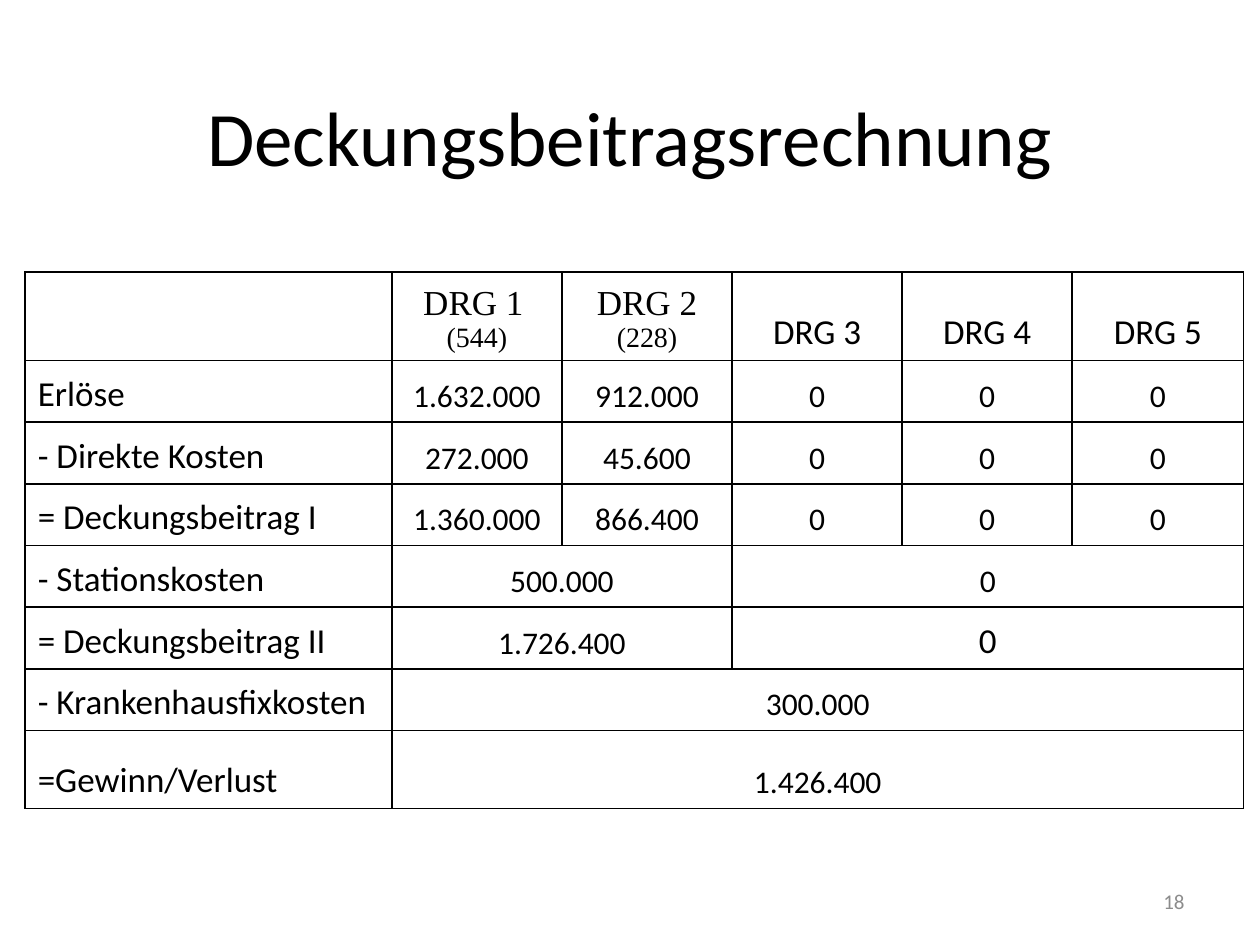
from lxml.etree import SubElement
from pptx import Presentation
from pptx.dml.color import RGBColor
from pptx.enum.text import MSO_ANCHOR, PP_ALIGN
from pptx.oxml.ns import qn
from pptx.util import Inches, Pt

SANS, SERIF = "Calibri", "Times New Roman"
BLACK, GREY = "000000", "8C8C8C"
COLS = [2.91, 1.35, 1.35, 1.35, 1.35, 1.36]
ROWS = [0.65] + [0.49] * 6 + [0.62]
SPANS = {5: [1] * 5, 2: [2, 3], 1: [5]}
HEADS = [
    [[("DRG 1", 20), (" ", 16)], [("(544)", 16)]],
    [[("DRG 2", 20)], [("(228)", 16)]],
    "DRG 3", "DRG 4", "DRG 5",
]
BODY = [
    ("Erlöse", ["1.632.000", "912.000", "0", "0", "0"]),
    ("- Direkte Kosten", ["272.000", "45.600", "0", "0", "0"]),
    ("= Deckungsbeitrag I", ["1.360.000", "866.400", "0", "0", "0"]),
    ("- Stationskosten", ["500.000", "0"]),
    ("= Deckungsbeitrag II", ["1.726.400", "0"]),
    ("- Krankenhausfixkosten", ["300.000"]),
    ("=Gewinn/Verlust", ["1.426.400"]),
]


def rgb(color):
    """Turn a hex string into a colour."""
    return RGBColor.from_string(color)


def add_run(p, text, size, font=SANS, color=BLACK):
    """Append one formatted run to a paragraph."""
    r = p.add_run()
    r.text = text
    r.font.size, r.font.name = Pt(size), font
    r.font.color.rgb = rgb(color)


def add_label(slide, box, text, size, align, color=BLACK):
    """Place one line of text, vertically centred in its box."""
    tf = slide.shapes.add_textbox(*map(Inches, box)).text_frame
    tf.word_wrap = True
    tf.vertical_anchor = MSO_ANCHOR.MIDDLE
    p = tf.paragraphs[0]
    p.alignment = align
    add_run(p, text, size, color=color)


def style_cell(cell):
    """Clear the fill, anchor at the bottom and draw black borders."""
    cell.vertical_anchor = MSO_ANCHOR.BOTTOM
    tcPr = cell._tc.get_or_add_tcPr()
    for side in ("lnL", "lnR", "lnT", "lnB"):
        ln = SubElement(tcPr, qn(f"a:{side}"), w=str(Pt(1)))
        fill = SubElement(ln, qn("a:solidFill"))
        SubElement(fill, qn("a:srgbClr"), val=BLACK)
    cell.fill.background()


def write_cell(cell, text, size, align=PP_ALIGN.CENTER):
    """Write one spaced line of text into a cell."""
    p = cell.text_frame.paragraphs[0]
    p.alignment = align
    p.line_spacing, p.space_after = 1.07, Pt(8)
    add_run(p, text, size)


def write_counted_head(cell, lines):
    """Write a heading with its case count below, on hanging indents."""
    tf = cell.text_frame
    for i, line in enumerate(lines):
        p = tf.add_paragraph() if i else tf.paragraphs[0]
        p.alignment = PP_ALIGN.CENTER
        pPr = p._p.get_or_add_pPr()
        pPr.set("marL", str(Inches(0.67)))
        pPr.set("indent", str(-Inches(0.67)))
        for text, size in line:
            add_run(p, text, size, SERIF)


def add_costing_table(slide, left, top):
    """Build the contribution margin table at the given corner."""
    table = slide.shapes.add_table(
        len(ROWS), len(COLS), Inches(left), Inches(top),
        Inches(sum(COLS)), Inches(sum(ROWS))).table
    table.first_row = table.horz_banding = False
    for col, width in zip(table.columns, COLS):
        col.width = Inches(width)
    for row, height in zip(table.rows, ROWS):
        row.height = Inches(height)
    for cell in table.iter_cells():
        style_cell(cell)

    for c, head in enumerate(HEADS, 1):
        if isinstance(head, str):
            write_cell(table.cell(0, c), head, 20)
        else:
            write_counted_head(table.cell(0, c), head)
    for r, (label, values) in enumerate(BODY, 1):
        write_cell(table.cell(r, 0), label, 20, PP_ALIGN.LEFT)
        c = 1
        for value, span in zip(values, SPANS[len(values)]):
            cell = table.cell(r, c)
            if span > 1:
                cell.merge(table.cell(r, c + span - 1))
            large = label == "= Deckungsbeitrag II" and value == "0"
            write_cell(cell, value, 20 if large else 18)
            c += span


def main():
    """Build and save the slide."""
    prs = Presentation()
    prs.slide_width, prs.slide_height = Inches(10), Inches(7.5)
    slide = prs.slides.add_slide(prs.slide_layouts[6])
    add_label(slide, (0.5, 0.32, 9, 1.51), "Deckungsbeitragsrechnung", 44, PP_ALIGN.CENTER)
    add_costing_table(slide, 0.2, 2.16)
    add_label(slide, (7.17, 6.95, 2.33, 0.4), "18", 12, PP_ALIGN.RIGHT, GREY)
    prs.save("out.pptx")


if __name__ == "__main__":
    main()
